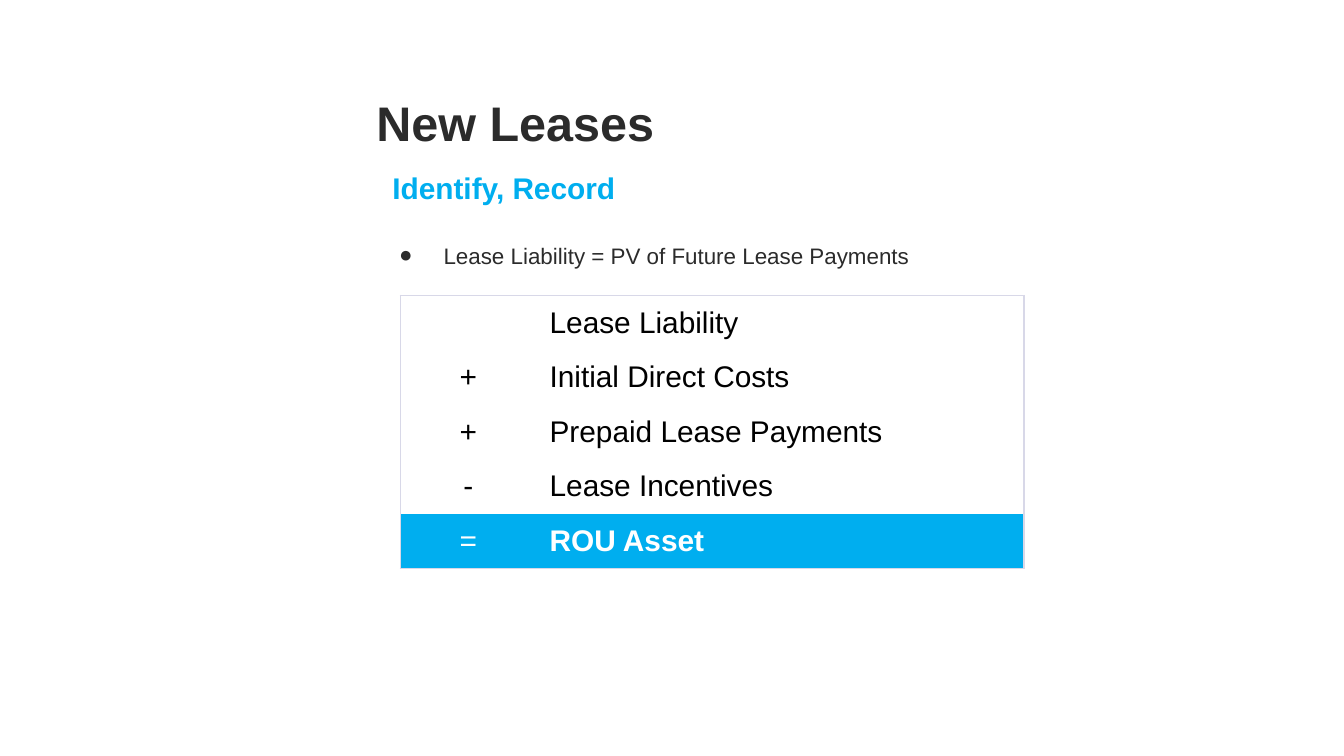
from lxml import etree
from pptx import Presentation
from pptx import util as u
from pptx.dml.color import RGBColor
from pptx.enum import text
from pptx.oxml import ns

INK = RGBColor(0x2B, 0x2B, 0x2B)
CYAN = RGBColor(0x00, 0xAE, 0xEF)
BLACK = RGBColor(0x00, 0x00, 0x00)
WHITE = RGBColor(0xFF, 0xFF, 0xFF)
FRAME = RGBColor(0xD8, 0xD8, 0xE8)
FONT = "Arial"
NO_STYLE = "{2D5ABB26-0587-4C30-8999-92F81FD0307C}"

PAGE_WIDTH = 10
PAGE_HEIGHT = PAGE_WIDTH * 9 / 16
COLUMN_LEFT, COLUMN_WIDTH = 2.75, 6.75
ROU_ASSET = [
    ("", "Lease Liability"),
    ("+", "Initial Direct Costs"),
    ("+", "Prepaid Lease Payments"),
    ("-", "Lease Incentives"),
    ("=", "ROU Asset"),
]


def add_child(parent, tag, **attributes):
    return etree.SubElement(parent, ns.qn(tag), attributes)


def style_font(para, size, color, bold=False):
    font = para.font
    font.name, font.size, font.bold = FONT, u.Pt(size), bold
    font.color.rgb = color


def add_line(page, top, height, words, size, color, spacing,
             bold=False, margin=0, indent=0, bullet=None):
    """Place one paragraph in the text column; margin and indent in inches."""
    box = page.shapes.add_textbox(*map(u.Inches, (COLUMN_LEFT, top, COLUMN_WIDTH, height)))
    frame = box.text_frame
    frame.word_wrap = True
    frame.margin_left = frame.margin_right = u.Inches(0.05)
    frame.margin_top = frame.margin_bottom = u.Inches(0.05)
    para = frame.paragraphs[0]
    para.text = words
    para.line_spacing = spacing
    properties = para._p.get_or_add_pPr()
    properties.set("marL", str(u.Inches(margin)))
    properties.set("indent", str(u.Inches(indent)))
    if bullet:
        tint = add_child(properties, "a:buClr")
        add_child(tint, "a:srgbClr", val=str(color))
        add_child(properties, "a:buSzPts", val=str(size * 100))
        add_child(properties, "a:buFont", typeface=FONT)
        add_child(properties, "a:buChar", char=bullet)
    style_font(para, size, color, bold)


def draw_borders(cell, sides):
    """Draw a thin line on the given sides and none on the others."""
    properties = cell._tc.get_or_add_tcPr()
    for side in "LRTB":
        line = add_child(properties, f"a:ln{side}", w=str(u.Pt(1)))
        if side in sides:
            fill = add_child(line, "a:solidFill")
            add_child(fill, "a:srgbClr", val=str(FRAME))
        else:
            add_child(line, "a:noFill")


def add_calculation(page, left, top, widths, row_height, rows):
    """Table of signs and amounts, framed outside, with the result row filled."""
    holder = page.shapes.add_table(
        len(rows), len(widths), u.Inches(left), u.Inches(top),
        u.Inches(sum(widths)), u.Inches(row_height * len(rows)))
    table = holder.table
    table.first_row = table.horz_banding = False
    table._tbl.tblPr.find(ns.qn("a:tableStyleId")).text = NO_STYLE
    for column, width in zip(table.columns, widths):
        column.width = u.Inches(width)
    last = len(rows) - 1
    for r, row in enumerate(rows):
        table.rows[r].height = u.Inches(row_height)
        for c, words in enumerate(row):
            cell = table.cell(r, c)
            draw_borders(cell, "LR"[c] + "T" * (r == 0) + "B" * (r == last))
            if r == last:
                cell.fill.solid()
                cell.fill.fore_color.rgb = CYAN
            else:
                cell.fill.background()
            cell.vertical_anchor = text.MSO_ANCHOR.MIDDLE
            para = cell.text_frame.paragraphs[0]
            para.text = words
            para.alignment = text.PP_ALIGN.LEFT if c else text.PP_ALIGN.CENTER
            style_font(para, 16, WHITE if r == last else BLACK, r == last and c == 1)


def build_lease_page(page):
    add_line(page, 0.58, 0.55, "New Leases", 26, INK, 1.15, bold=True)
    add_line(page, 1.11, 0.68, "Identify, Record", 16, CYAN, 1.4,
             bold=True, margin=0.5, indent=-0.38)
    add_line(page, 1.62, 0.74, "Lease Liability = PV of Future Lease Payments", 12, INK, 1.65,
             margin=0.5, indent=-0.33, bullet="●")
    add_calculation(page, 2.98, 2.2, (1.01, 3.63), 2.03 / len(ROU_ASSET), ROU_ASSET)


def main():
    deck = Presentation()
    deck.slide_width, deck.slide_height = u.Inches(PAGE_WIDTH), u.Inches(PAGE_HEIGHT)
    build_lease_page(deck.slides.add_slide(deck.slide_layouts[6]))
    deck.save("out.pptx")


if __name__ == "__main__":
    main()
